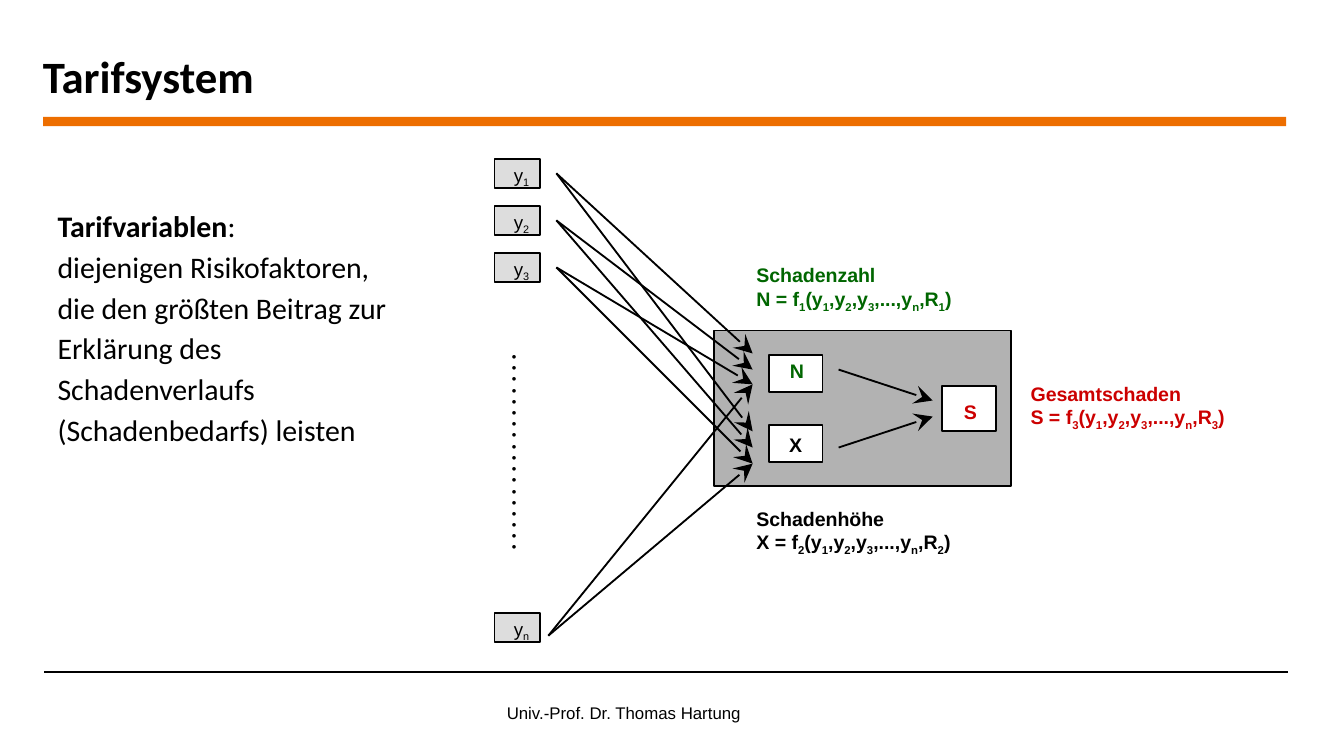
from lxml import etree
from pptx import Presentation
from pptx import util as u
from pptx.dml import color as c
from pptx.enum import shapes, text
from pptx.oxml import ns

BLACK, GREEN, RED = "000000", "006600", "CC0000"


def rgb(value):
    """Turn a hex string into a colour."""
    return c.RGBColor.from_string(value)


def add_runs(p, content, size=10.5, font="Arial", color=BLACK, bold=False):
    """Add text to a paragraph; an underscore makes the next character a subscript."""
    head, *tails = content.split("_")
    pieces = [(head, False)]
    for tail in tails:
        pieces += [(tail[0], True), (tail[1:], False)]
    for piece, lowered in pieces:
        if not piece:
            continue
        r = p.add_run()
        r.text = piece
        r.font.size, r.font.name, r.font.bold = u.Pt(size), font, bold
        r.font.color.rgb = rgb(color)
        if lowered:
            r._r.get_or_add_rPr().set("baseline", "-25000")


def add_text(s, box, lines, wrap=True, align=None, anchor="TOP", spacing=None, **fmt):
    """Add a text box with one paragraph per line."""
    sp = s.shapes.add_textbox(*map(u.Inches, box))
    tf = sp.text_frame
    tf.word_wrap = wrap
    tf.vertical_anchor = text.MSO_ANCHOR[anchor]
    for i, line in enumerate(lines):
        p = tf.paragraphs[0] if i == 0 else tf.add_paragraph()
        p.alignment, p.line_spacing = align, spacing
        add_runs(p, line, **fmt)
    return sp


def add_box(s, box, fill, line=BLACK, label="", left=0, top=0, bottom=0, **fmt):
    """Add a filled rectangle with an optional label inside the given margins."""
    sp = s.shapes.add_shape(shapes.MSO_SHAPE.RECTANGLE, *map(u.Inches, box))
    sp.shadow.inherit = False
    sp.fill.solid()
    sp.fill.fore_color.rgb = rgb(fill)
    if line:
        sp.line.color.rgb, sp.line.width = rgb(line), u.Pt(1)
    else:
        sp.line.fill.background()
    if label:
        tf = sp.text_frame
        tf.margin_left, tf.margin_right = u.Inches(left), 0
        tf.margin_top, tf.margin_bottom = u.Inches(top), u.Inches(bottom)
        tf.vertical_anchor = text.MSO_ANCHOR.MIDDLE
        p = tf.paragraphs[0]
        p.alignment = text.PP_ALIGN.CENTER
        add_runs(p, label, **fmt)
    return sp


def add_line(s, start, end, width=1, arrow=True):
    """Add a straight line, with an arrowhead at its end if wanted."""
    cx = s.shapes.add_connector(shapes.MSO_CONNECTOR.STRAIGHT, *map(u.Inches, (*start, *end)))
    cx.line.color.rgb, cx.line.width = rgb(BLACK), u.Pt(width)
    if arrow:
        etree.SubElement(cx.line._get_or_add_ln(), ns.qn("a:tailEnd"),
                         type="stealth", w="lg", len="lg")
    etree.SubElement(cx._element.spPr, ns.qn("a:effectLst"))
    return cx


def header(s, x, y, w):
    """Place the title above its orange bar."""
    add_text(s, (x - 0.1, y, 8.48, 0.48), ["Tarifsystem"], anchor="BOTTOM",
             size=24, font="Calibri", bold=True)
    add_box(s, (x, y + 0.54, w, 0.07), "ED6E00", line=None)


def footer(s, x, y, w):
    """Place the closing rule and the author's name."""
    add_line(s, (x, y), (x + w, y), width=1.5, arrow=False)
    add_text(s, (x + 3.32, y + 0.18, 1.98, 0.25), ["Univ.-Prof. Dr. Thomas Hartung"],
             wrap=False, align=text.PP_ALIGN.CENTER, size=9)


def definition(s, x, y, w, h):
    """Place the definition of the tariff variables."""
    fmt = {"size": 16, "font": "Calibri"}
    sp = add_text(s, (x, y, w, h), ["Tarifvariablen"], spacing=1.14, bold=True, **fmt)
    tf = sp.text_frame
    add_runs(tf.paragraphs[0], ":", **fmt)
    p = tf.add_paragraph()
    p.line_spacing = 1.14
    add_runs(p, "diejenigen Risikofaktoren, die den größten Beitrag zur Erklärung "
             "des Schadenverlaufs (Schadenbedarfs) leisten", **fmt)


def diagram(s, x, y):
    """Place the variables, the claims model and the arrows between them."""
    add_box(s, (x + 1.63, y + 1.28, 2.21, 1.16), "B2B2B2")

    variables = [("1", 0), ("2", 0.35), ("3", 0.7), ("n", 3.38)]
    for index, dy in variables:
        add_box(s, (x, y + dy, 0.34, 0.22), "DDDDDD", label=f"y_{index}",
                left=0.06, top=0.04, size=10)
    dots = add_text(s, (x - 0.64, y + 2.05, 1.68, 0.3), [" ".join("." * 18)],
                    wrap=False, size=12, font="Times New Roman", bold=True)
    dots.rotation = 90

    outcomes = [
        ("N", GREEN, (2.04, 1.46, 0.4, 0.28), "Schadenzahl", (1.85, 0.73), (0.02, 0, 0.04)),
        ("X", BLACK, (2.04, 1.98, 0.4, 0.28), "Schadenhöhe", (1.85, 2.54), (0, 0.02, 0)),
        ("S", RED, (3.33, 1.69, 0.4, 0.34), "Gesamtschaden", (3.89, 1.61), (0.02, 0.04, 0)),
    ]
    for i, (letter, color, box, name, (tx, ty), margins) in enumerate(outcomes, 1):
        dx, dy, w, h = box
        left, top, bottom = margins
        add_box(s, (x + dx, y + dy, w, h), "FFFFFF", label=letter, left=left, top=top,
                bottom=bottom, color=color, bold=True)
        formula = f"{letter} = f_{i}(y_1,y_2,y_3,...,y_n,R_{i})"
        add_text(s, (x + tx, y + ty, 1.71, 0.46), [name, formula],
                 wrap=False, color=color, bold=True)

    starts = [(0.46, 0.11), (0.46, 0.46), (0.46, 0.81), (0.4, 3.55)]
    for ends in ((1.45, 1.57, 1.68, 1.68), (2.03, 2.15, 2.27, 2.27)):
        for (dx, dy), end in zip(starts, ends):
            add_line(s, (x + dx, y + dy), (x + 1.92, y + end))
    for start, end in ((1.57, 1.8), (2.15, 1.92)):
        add_line(s, (x + 2.56, y + start), (x + 3.26, y + end))


def main():
    """Build the slide and save it."""
    prs = Presentation()
    prs.slide_width = u.Inches(10)
    prs.slide_height = prs.slide_width * 9 // 16
    s = prs.slides.add_slide(prs.slide_layouts[6])
    header(s, 0.32, 0.33, 9.25)
    footer(s, 0.33, 5, 9.25)
    definition(s, 0.33, 1.46, 2.69, 1.93)
    diagram(s, 3.68, 1.18)
    prs.save("out.pptx")


if __name__ == "__main__":
    main()
